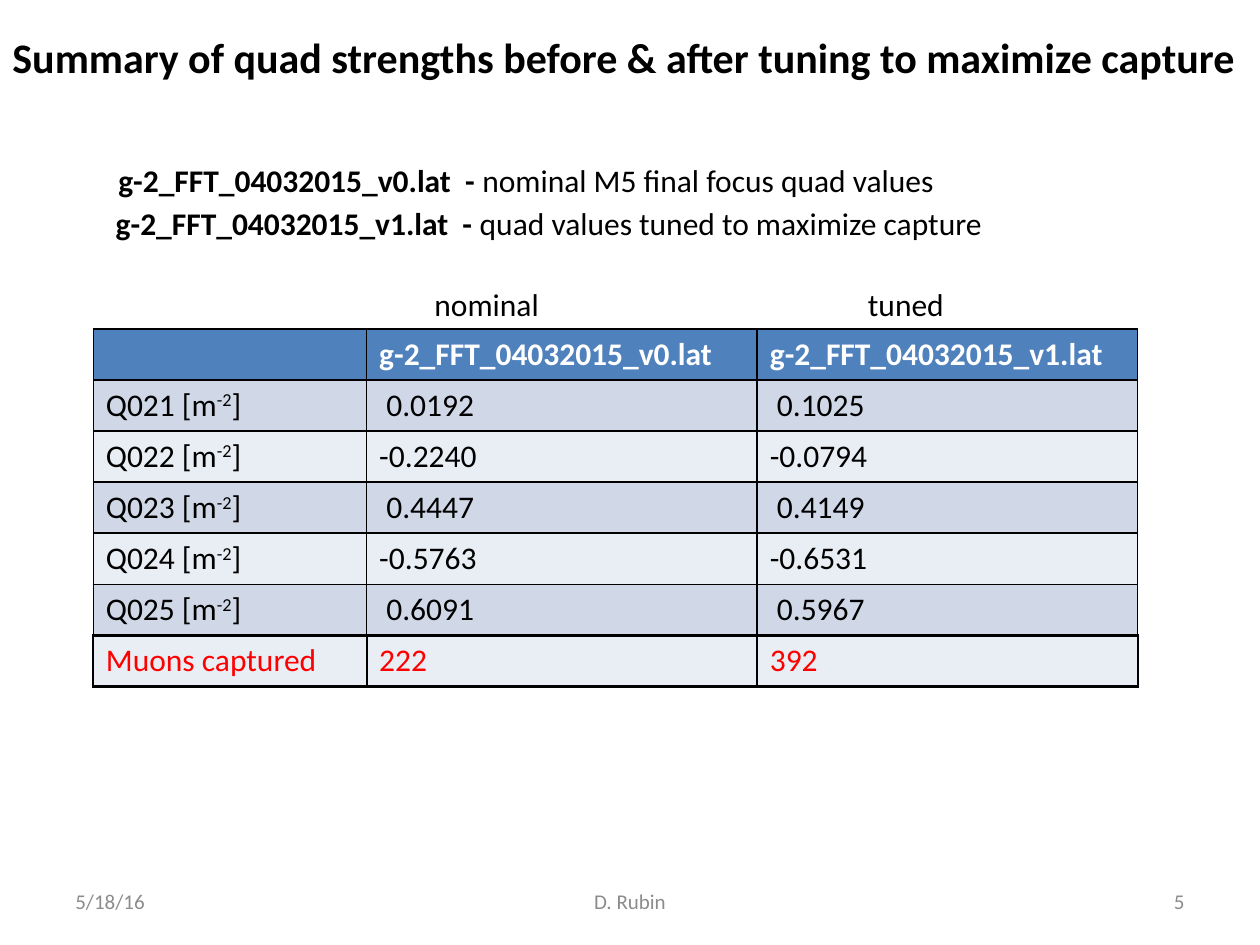
import pptx
import pptx.util
import pptx.dml.color
import pptx.enum.text
import pptx.oxml
import pptx.oxml.ns

Inches = pptx.util.Inches
Pt = pptx.util.Pt
ALIGN = pptx.enum.text.PP_ALIGN
ANCHOR = pptx.enum.text.MSO_ANCHOR
BLACK, WHITE, RED, GREY = "000000", "FFFFFF", "FF0000", "8C8C8C"
HEADER, BAND_DARK, BAND_LIGHT = "4F81BD", "D0D8E8", "E9EDF4"


def rgb(value):
    return pptx.dml.color.RGBColor.from_string(value)


def add_run(p, text, size=18, color=BLACK, bold=False, raised=False):
    r = p.add_run()
    r.text = text
    r.font.name = "Calibri"
    r.font.size = Pt(size)
    r.font.bold = bold
    r.font.color.rgb = rgb(color)
    if raised:
        r.font._element.set("baseline", "30000")


def add_text(s, box, runs, size=18, color=BLACK, align=ALIGN.LEFT, anchor=ANCHOR.TOP, wrap=False):
    tf = s.shapes.add_textbox(*map(Inches, box)).text_frame
    tf.word_wrap = wrap
    tf.vertical_anchor = anchor
    p = tf.paragraphs[0]
    p.alignment = align
    for text, bold in runs:
        add_run(p, text, size, color, bold)


def set_borders(cell, widths):
    tc_pr = cell._tc.get_or_add_tcPr()
    for i, (side, width) in enumerate(zip("LRTB", widths)):
        tc_pr.insert(i, pptx.oxml.parse_xml(
            f'<a:ln{side} {pptx.oxml.ns.nsdecls("a")} w="{Pt(width)}">'
            f'<a:solidFill><a:srgbClr val="{BLACK}"/></a:solidFill></a:ln{side}>'))


def add_title(s, box):
    add_text(s, box, [("Summary of quad strengths before & after tuning to maximize capture", True)], 24)


def add_file_notes(s, left, top):
    add_text(s, (left + 0.02, top, 6.78, 0.4),
             [("g-2_FFT_04032015_v0.lat  - ", True), ("nominal M5 final focus quad values", False)])
    add_text(s, (left, top + 0.34, 7.17, 0.4),
             [("g-2_FFT_04032015_v1.lat  - ", True), ("quad values tuned to maximize capture", False)])


def add_strength_table(s, box):
    left, top, width, height = box
    add_text(s, (left + 2.61, top - 0.4, 1.04, 0.4), [("nominal", False)])
    add_text(s, (left + 6.05, top - 0.4, 0.81, 0.4), [("tuned", False)])
    rows = [
        ("", "g-2_FFT_04032015_v0.lat", "g-2_FFT_04032015_v1.lat"),
        ("Q021", " 0.0192", " 0.1025"),
        ("Q022", "-0.2240", "-0.0794"),
        ("Q023", " 0.4447", " 0.4149"),
        ("Q024", "-0.5763", "-0.6531"),
        ("Q025", " 0.6091", " 0.5967"),
        ("Muons captured", "222", "392"),
    ]
    last = len(rows) - 1
    table = s.shapes.add_table(len(rows), 3, *map(Inches, box)).table
    for column, column_width in zip(table.columns, (2.17, 3.1, width - 5.27)):
        column.width = Inches(column_width)
    for i, row in enumerate(rows):
        table.rows[i].height = Inches(height / len(rows))
        fill = HEADER if i == 0 else BAND_DARK if i % 2 else BAND_LIGHT
        color = WHITE if i == 0 else RED if i == last else BLACK
        line = 1.5 if i == last else 1
        for j, text in enumerate(row):
            cell = table.cell(i, j)
            cell.fill.solid()
            cell.fill.fore_color.rgb = rgb(fill)
            set_borders(cell, (line, line, line, 1.5 if i >= last - 1 else 1))
            p = cell.text_frame.paragraphs[0]
            if j == 0 and 0 < i < last:
                add_run(p, text + " [m")
                add_run(p, "-2", raised=True)
                add_run(p, "]")
            elif text:
                add_run(p, text, color=color, bold=i == 0)
            else:
                p.font.size = Pt(18)


def add_footer(s, box):
    left, top, width, height = box
    parts = [
        ("5/18/16", left, 2.33, ALIGN.LEFT),
        ("D. Rubin", left + (width - 3.17) / 2, 3.17, ALIGN.CENTER),
        ("5", left + width - 2.33, 2.33, ALIGN.RIGHT),
    ]
    for text, x, part_width, align in parts:
        add_text(s, (x, top, part_width, height), [(text, False)], 12, GREY, align, ANCHOR.MIDDLE, True)


def main():
    prs = pptx.Presentation()
    prs.slide_width, prs.slide_height = Inches(10), Inches(7.5)
    s = prs.slides.add_slide(prs.slide_layouts[6])
    add_strength_table(s, (0.74, 2.61, 8.29, 2.84))
    add_file_notes(s, 0.82, 1.23)
    add_footer(s, (0.5, 6.95, 9, 0.4))
    add_title(s, (0, 0.2, 10.05, 0.5))
    prs.save("out.pptx")


if __name__ == "__main__":
    main()
